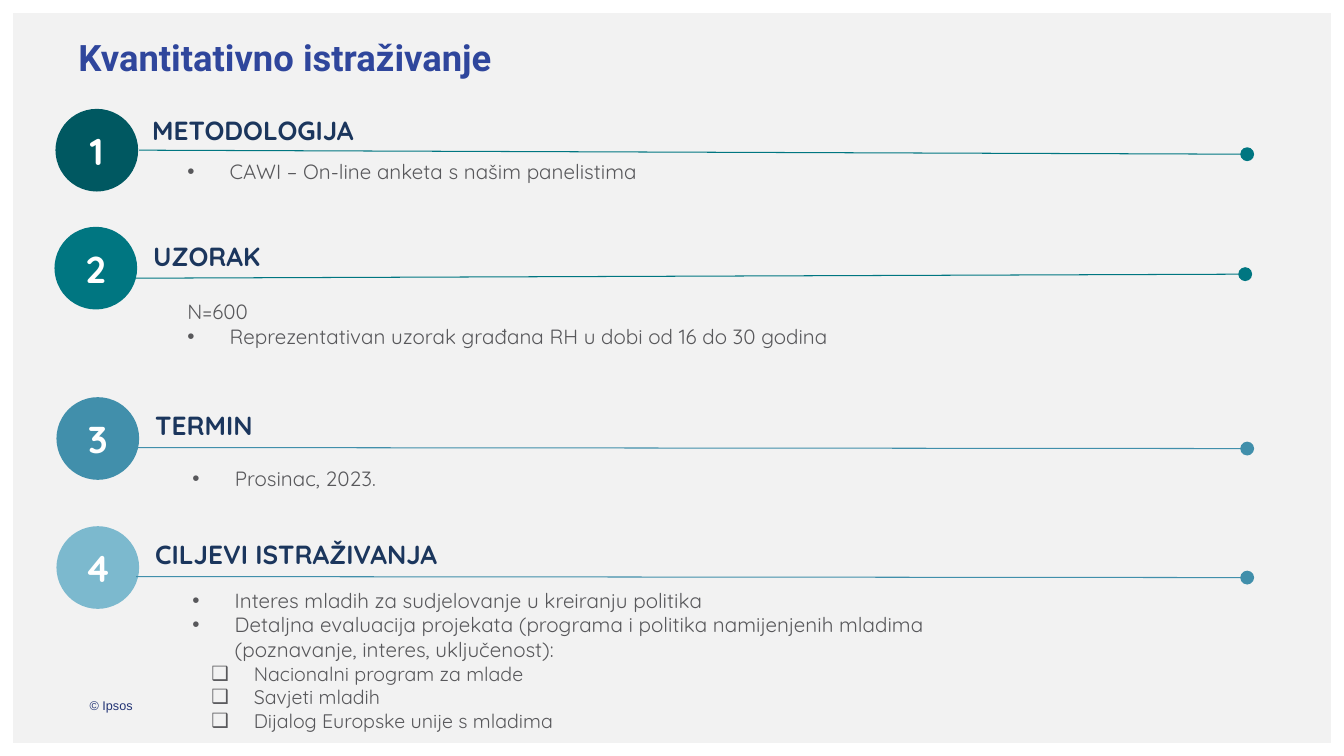
"""Build the slide on the quantitative survey: method, sample, date and goals."""
import pptx
import pptx.util
import pptx.dml.color
import pptx.enum.shapes
import pptx.enum.text
from lxml import etree

PX = 9144
DISC = 82
BODY_GREY = "58585B"
BODY_SIZE = 14.7
HANG = 42
MIDDLE = pptx.enum.text.MSO_ANCHOR.MIDDLE
SHAPES = pptx.enum.shapes.MSO_SHAPE


def rgb(code):
    return pptx.dml.color.RGBColor.from_string(code)


def write(shape, lines, size, color, font="Quicksand", bold=False, insets=None, anchor=None):
    frame = shape.text_frame
    frame.word_wrap = True
    if anchor is not None:
        frame.vertical_anchor = anchor
    if insets is not None:
        frame.margin_left = frame.margin_right = 0
        frame.margin_top = frame.margin_bottom = insets * PX
    for index, (bullet, text) in enumerate(lines):
        para = frame.paragraphs[0] if index == 0 else frame.add_paragraph()
        para.text = text
        if bullet:
            props = para._p.get_or_add_pPr()
            props.set("marL", str((61 if bullet == "❑" else HANG) * PX))
            props.set("indent", str(-HANG * PX))
            face = etree.SubElement(props, pptx.oxml.ns.qn("a:buFont"))
            face.set("typeface", "Arial")
            mark = etree.SubElement(props, pptx.oxml.ns.qn("a:buChar"))
            mark.set("char", bullet)
            para.level = 1 if bullet == "❑" else 0
        para.font.size = pptx.util.Pt(14 if bullet == "❑" else size)
        para.font.name = font
        para.font.bold = bold
        para.font.color.rgb = rgb(color)


deck = pptx.Presentation()
deck.slide_width = 1333 * PX
deck.slide_height = 750 * PX
page = deck.slides.add_slide(deck.slide_layouts[6])
page.background.fill.solid()
page.background.fill.fore_color.rgb = rgb("F2F2F2")

credit = page.shapes.add_textbox(89 * PX, 680 * PX, 1143 * PX, 40 * PX)
write(credit, [("", "© Ipsos")], 9, "233475", font="Arial", insets=5, anchor=MIDDLE)

border = page.shapes.add_shape(SHAPES.FRAME, 0, 0, deck.slide_width, deck.slide_height)
border.adjustments[0] = 0.017
border.shadow.inherit = False
border.fill.solid()
border.fill.fore_color.rgb = rgb("FFFFFF")
border.line.fill.background()

title = page.shapes.add_textbox(68 * PX, 30 * PX, 495 * PX, 54 * PX)
write(title, [("", "Kvantitativno istraživanje")], 26, "2F469C", font="Roboto", bold=True)
title.text_frame.word_wrap = False

sections = [
    ("METODOLOGIJA", "005861", "007681", (55, 108), (151, 88),
     (138, 149, 1237, 153), (176, 153, 1061, 115),
     [("•", "CAWI – On-line anketa s našim panelistima")]),
    ("UZORAK", "007681", "007681", (54, 225), (152, 213),
     (135, 276, 1235, 272), (176, 292, 1056, 105),
     [("", "N=600"),
      ("•", "Reprezentativan uzorak građana RH u dobi od 16 do 30 godina")]),
    ("TERMIN", "418FAB", "418FAB", (56, 394), (154, 381),
     (135, 444, 1237, 445), (181, 457, 1061, 70),
     [("•", "Prosinac, 2023.")]),
    ("CILJEVI ISTRAŽIVANJA", "7CB9CE", "418FAB", (56, 522), (154, 509),
     (135, 572, 1237, 573), (181, 578, 824, 135),
     [("•", "Interes mladih za sudjelovanje u kreiranju politika"),
      ("•", "Detaljna evaluacija projekata (programa i politika namijenjenih mladima "
            "(poznavanje, interes, uključenost):"),
      ("❑", "Nacionalni program za mlade"),
      ("❑", "Savjeti mladih"),
      ("❑", "Dijalog Europske unije s mladima")]),
]

for number, section in enumerate(sections, start=1):
    heading, disc_color, rule_color, disc_at, heading_at, rule_ends, body_at, lines = section

    disc = page.shapes.add_shape(SHAPES.OVAL, disc_at[0] * PX, disc_at[1] * PX, DISC * PX, DISC * PX)
    disc.shadow.inherit = False
    disc.fill.solid()
    disc.fill.fore_color.rgb = rgb(disc_color)
    disc.line.fill.background()
    write(disc, [("", str(number))], 26.7, "FFFFFF", bold=True, insets=0, anchor=MIDDLE)
    disc.text_frame.paragraphs[0].alignment = pptx.enum.text.PP_ALIGN.CENTER

    rule = page.shapes.add_connector(
        pptx.enum.shapes.MSO_CONNECTOR.STRAIGHT, *[end * PX for end in rule_ends])
    rule.line.color.rgb = rgb(rule_color)
    rule.line.width = pptx.util.Pt(0.75)
    dot = etree.SubElement(rule.line._get_or_add_ln(), pptx.oxml.ns.qn("a:tailEnd"))
    for key, value in (("type", "oval"), ("w", "lg"), ("len", "lg")):
        dot.set(key, value)
    etree.SubElement(rule._element.spPr, pptx.oxml.ns.qn("a:effectLst"))

    label = page.shapes.add_textbox(heading_at[0] * PX, heading_at[1] * PX, 567 * PX, DISC * PX)
    write(label, [("", heading)], 18.7, "1B365D", bold=True, insets=0, anchor=MIDDLE)

    body = page.shapes.add_textbox(*[length * PX for length in body_at])
    write(body, lines, BODY_SIZE, BODY_GREY)

deck.save("out.pptx")
